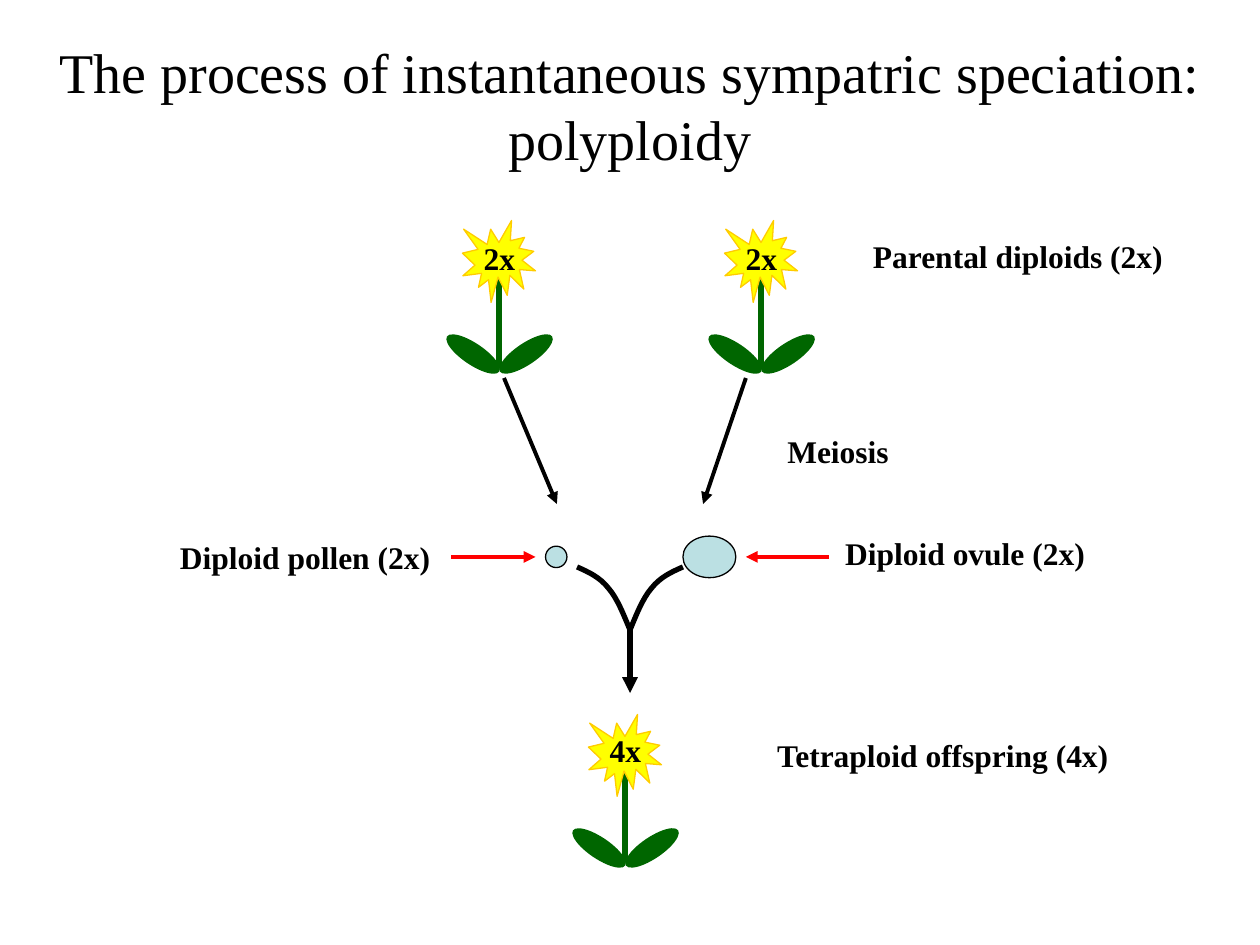
from lxml import etree
from pptx import Presentation
from pptx import util as u
from pptx.dml.color import RGBColor
from pptx.enum import shapes, text
from pptx.oxml.ns import qn

Inches = u.Inches
FONT = "Times New Roman"
BLACK, RED, GREEN = "000000", "FF0000", "006600"
YELLOW, GOLD, PALE_BLUE = "FFFF00", "FFCC00", "BBE0E3"


def color(hex_string):
    return RGBColor.from_string(hex_string)


def add_text(slide, box, words, size=18, bold=True, wrap=False, align=text.PP_ALIGN.LEFT):
    shape = slide.shapes.add_textbox(*map(Inches, box))
    frame = shape.text_frame
    frame.word_wrap = wrap
    frame.auto_size = text.MSO_AUTO_SIZE.SHAPE_TO_FIT_TEXT
    frame.text = words
    paragraph = frame.paragraphs[0]
    paragraph.alignment = align
    font = paragraph.runs[0].font
    font.name, font.size, font.bold = FONT, u.Pt(size), bold
    font.color.rgb = color(BLACK)


def add_filled(parent, kind, box, fill, line=None, rotation=0):
    shape = parent.shapes.add_shape(kind, *map(Inches, box))
    shape.shadow.inherit = False
    shape.rotation = rotation
    shape.fill.solid()
    shape.fill.fore_color.rgb = color(fill)
    if line:
        shape.line.color.rgb = color(line)
        shape.line.width = u.Pt(0.75)
    else:
        shape.line.fill.background()


def add_line(parent, start, end, stroke, width, arrow=True):
    line = parent.shapes.add_connector(
        shapes.MSO_CONNECTOR.STRAIGHT, *map(Inches, (*start, *end)))
    line.line.color.rgb = color(stroke)
    line.line.width = u.Pt(width)
    if arrow:
        etree.SubElement(line.line._get_or_add_ln(), qn("a:tailEnd"), type="triangle")
    etree.SubElement(line._element.spPr, qn("a:effectLst"))


def add_curve(slide, points, stroke, width):
    """Draw a Bezier path: a start point, then three points per segment."""
    start, *controls = [(Inches(x), Inches(y)) for x, y in points]
    builder = slide.shapes.build_freeform(*start)
    builder.add_line_segments(controls, close=False)
    shape = builder.convert_to_shape()
    shape.shadow.inherit = False
    shape.fill.background()
    shape.line.color.rgb = color(stroke)
    shape.line.width = u.Pt(width)
    # Join each three straight steps into one cubic segment
    path = shape._element.find(".//" + qn("a:path"))
    steps = path.findall(qn("a:lnTo"))
    for first in range(0, len(steps), 3):
        cubic = etree.SubElement(path, qn("a:cubicBezTo"))
        for step in steps[first:first + 3]:
            cubic.append(step[0])
            path.remove(step)


def add_flower(slide, left, top, ploidy, label_top):
    group = slide.shapes.add_group_shape()
    oval = shapes.MSO_SHAPE.OVAL
    # Leaves, stem and blossom
    for offset, rotation in ((0, 304), (0.42, 56)):
        add_filled(group, oval, (left + offset, top + 0.81, 0.17, 0.5), GREEN, rotation=rotation)
    stem = left + 0.29
    add_line(group, (stem, top + 0.42), (stem, top + 1.17), GREEN, 3, arrow=False)
    add_filled(group, shapes.MSO_SHAPE.EXPLOSION1, (left, top, 0.58, 0.65), YELLOW, GOLD)
    add_text(slide, (left + 0.07, top + label_top, 0.45, 0.4), ploidy)


def add_parents(slide):
    for left in (3.67, 5.75):
        add_flower(slide, left, 1.75, "2x", 0.1)
    add_text(slide, (6.83, 1.83, 2.51, 0.4), "Parental diploids (2x)")


def add_meiosis(slide, top, bottom):
    add_line(slide, (4, top), (4.42, bottom), BLACK, 2.25)
    add_line(slide, (5.92, top), (5.58, bottom), BLACK, 2.25)
    add_text(slide, (6.15, 3.38, 1.01, 0.4), "Meiosis")


def add_gametes(slide, middle):
    # Pollen and ovule, each with its label and pointer
    for left, width, height in ((4.33, 0.17, 0.17), (5.42, 0.42, 0.33)):
        box = (left, middle - height / 2, width, height)
        add_filled(slide, shapes.MSO_SHAPE.OVAL, box, PALE_BLUE, BLACK)
    add_text(slide, (1.33, 4.22, 2.19, 0.4), "Diploid pollen (2x)")
    add_text(slide, (6.61, 4.19, 2.1, 0.4), "Diploid ovule (2x)")
    add_line(slide, (3.58, middle), (4.25, middle), RED, 2.25)
    add_line(slide, (6.58, middle), (5.92, middle), RED, 2.25)


def add_fusion(slide, center, top):
    # Two mirrored curves meet and continue as one arrow
    arm = ((0.42, 0), (0.33, 0.04), (0.24, 0.08), (0.17, 0.17),
           (0.1, 0.25), (0.05, 0.38), (0, 0.5))
    for side in (1, -1):
        add_curve(slide, [(center + side * x, top + y) for x, y in arm], BLACK, 3)
    add_line(slide, (center, top + 0.5), (center, top + 1), BLACK, 3)


def add_offspring(slide):
    add_flower(slide, 4.67, 5.67, "4x", 0.08)
    add_text(slide, (6.07, 5.79, 2.85, 0.4), "Tetraploid offspring (4x)")


def main():
    presentation = Presentation()
    presentation.slide_width, presentation.slide_height = Inches(10), Inches(7.5)
    slide = presentation.slides.add_slide(presentation.slide_layouts[6])
    add_text(slide, (0, 0.25, 10, 1.18),
             "The process of instantaneous sympatric speciation: polyploidy",
             size=32, bold=False, wrap=True, align=text.PP_ALIGN.CENTER)
    add_parents(slide)
    add_meiosis(slide, 3, 4)
    add_gametes(slide, 4.42)
    add_fusion(slide, 5, 4.5)
    add_offspring(slide)
    presentation.save("out.pptx")


if __name__ == "__main__":
    main()
